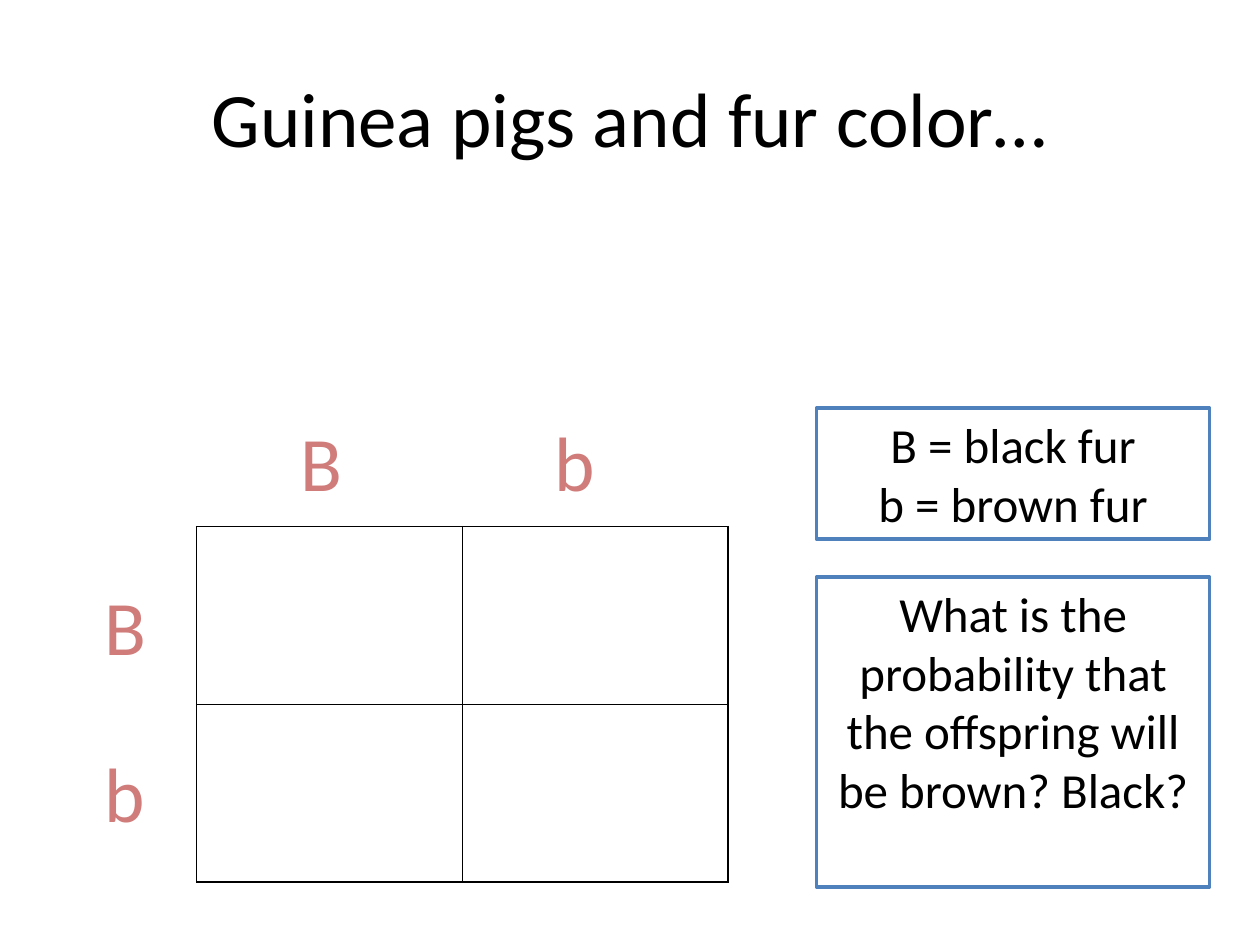
from lxml import etree
from pptx import Presentation
from pptx import util as u
from pptx.dml.color import RGBColor
from pptx.enum import shapes, text
from pptx.oxml.ns import qn

Inches = u.Inches
COLORS = {"ink": "000000", "paper": "FFFFFF", "allele": "D07C7A", "frame": "4F81BD"}
FONT = "Calibri"


def rgb(name):
    return RGBColor.from_string(COLORS[name])


def write(sp, lines, size, color="ink", align=text.PP_ALIGN.CENTER,
          anchor=text.MSO_ANCHOR.TOP):
    tf = sp.text_frame
    tf.word_wrap = True
    tf.vertical_anchor = anchor
    for i, line in enumerate(lines):
        p = tf.paragraphs[0] if i == 0 else tf.add_paragraph()
        p.alignment = align
        r = p.add_run()
        r.text = line
        r.font.size = u.Pt(size)
        r.font.name = FONT
        r.font.color.rgb = rgb(color)


def add_title(s, x, y, w, h, title):
    sp = s.shapes.add_textbox(Inches(x), Inches(y), Inches(w), Inches(h))
    write(sp, [title], 44, anchor=text.MSO_ANCHOR.MIDDLE)


def outline_cell(cell):
    tcPr = cell._tc.get_or_add_tcPr()
    for side in ("a:lnL", "a:lnR", "a:lnT", "a:lnB"):
        ln = etree.SubElement(tcPr, qn(side), w=str(u.Pt(1)))
        fill = etree.SubElement(ln, qn("a:solidFill"))
        etree.SubElement(fill, qn("a:srgbClr"), val=COLORS["ink"])
    cell.fill.background()


def add_allele(s, x, y, letter):
    sp = s.shapes.add_textbox(Inches(x), Inches(y), Inches(0.71), Inches(0.84))
    write(sp, [letter], 44, "allele", text.PP_ALIGN.LEFT)


def add_punnett_square(s, x, y, w, h, alleles):
    """Empty cross table with one parent's alleles above and the other's at left."""
    n = len(alleles)
    frame = s.shapes.add_table(n, n, Inches(x), Inches(y), Inches(w), Inches(h))
    table = frame.table
    table.first_row = table.horz_banding = False
    for cell in table.iter_cells():
        outline_cell(cell)
    for i, letter in enumerate(alleles):
        add_allele(s, x + 0.73 + 2.01 * i, y - 0.94, letter)
        add_allele(s, x - 0.83, y + 0.36 + 1.33 * i, letter)


def add_note(s, x, y, w, h, lines):
    sp = s.shapes.add_shape(shapes.MSO_SHAPE.RECTANGLE,
                            Inches(x), Inches(y), Inches(w), Inches(h))
    sp.shadow.inherit = False
    sp.fill.solid()
    sp.fill.fore_color.rgb = rgb("paper")
    sp.line.color.rgb = rgb("frame")
    sp.line.width = u.Pt(2)
    write(sp, lines, 28)


def main():
    prs = Presentation()
    prs.slide_width, prs.slide_height = Inches(10), Inches(7.5)
    s = prs.slides.add_slide(prs.slide_layouts[6])
    add_title(s, 0.5, 0.3, 9, 1.25, "Guinea pigs and fur color…")
    add_punnett_square(s, 1.56, 4.18, 4.22, 2.82, ["B", "b"])
    add_note(s, 6.48, 3.24, 3.12, 1.04, ["B = black fur", "b = brown fur"])
    add_note(s, 6.48, 4.58, 3.12, 2.46,
             ["What is the probability that the offspring will be brown? Black?"])
    prs.save("out.pptx")


if __name__ == "__main__":
    main()
